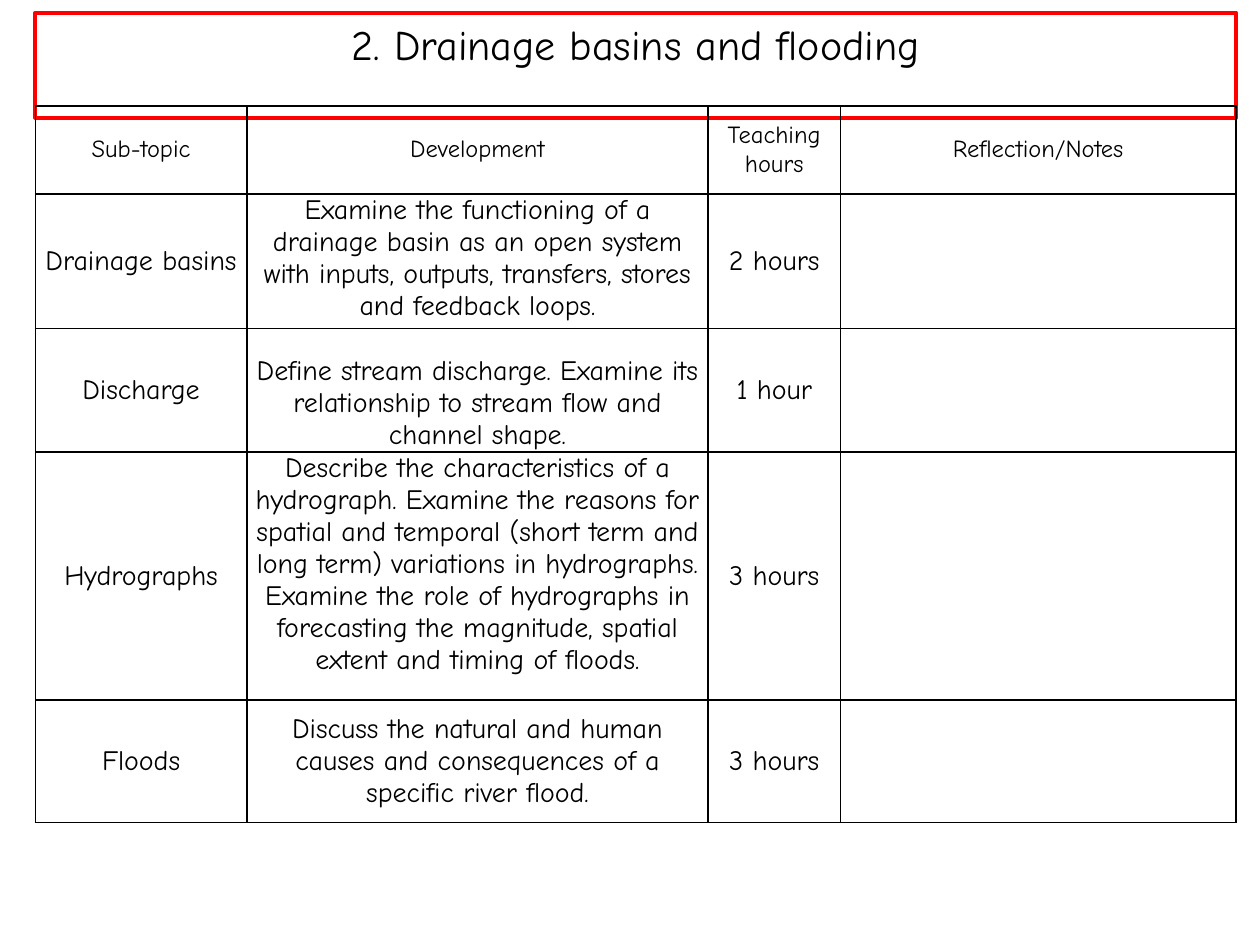
"""Build a slide that plans the drainage basins and flooding topic."""
import pptx
import pptx.dml.color
import pptx.enum.text
import pptx.oxml
import pptx.oxml.ns
import pptx.util

Inches = pptx.util.Inches
ANCHOR = pptx.enum.text.MSO_ANCHOR
COLORS = {"text": "000000", "grid": "000000", "paper": "FFFFFF", "frame": "FF0000"}
LEFT = 0.28
COLUMNS = [1.68, 3.66, 1.05, 3.14]
HEADERS = ["Sub-topic", "Development", "Teaching hours", "Reflection/Notes"]
TOPICS = [
    ("Drainage basins", "Examine the functioning of a drainage basin as an open system "
     "with inputs, outputs, transfers, stores and feedback loops.", "2 hours", 0.98, ANCHOR.TOP),
    ("Discharge", "Define stream discharge. Examine its relationship to stream flow "
     "and channel shape.", "1 hour", 0.98, ANCHOR.BOTTOM),
    ("Hydrographs", "Describe the characteristics of a hydrograph. Examine the reasons for "
     "spatial and temporal (short term and long term) variations in hydrographs. Examine the "
     "role of hydrographs in forecasting the magnitude, spatial extent and timing of floods.",
     "3 hours", 1.97, ANCHOR.TOP),
    ("Floods", "Discuss the natural and human causes and consequences of a specific "
     "river flood.", "3 hours", 0.97, ANCHOR.MIDDLE),
]


def rgb(name):
    return pptx.dml.color.RGBColor.from_string(COLORS[name])


def write_text(tf, text, size=16, font="Comic Neue", color="text"):
    p = tf.paragraphs[0]
    p.alignment = pptx.enum.text.PP_ALIGN.CENTER
    r = p.add_run()
    r.text = text
    r.font.name = font
    r.font.size = pptx.util.Pt(size)
    r.font.color.rgb = rgb(color)


class SlideBuilder:
    def __init__(self, slide, border=1):
        self.s = slide
        self.border = pptx.util.Pt(border)

    def title(self, text, left, top, width, height):
        sp = self.s.shapes.title
        sp.left, sp.top, sp.width, sp.height = map(Inches, (left, top, width, height))
        sp.fill.solid()
        sp.fill.fore_color.rgb = rgb("paper")
        sp.line.color.rgb = rgb("frame")
        sp.line.width = pptx.util.Pt(2.25)
        tf = sp.text_frame
        tf.word_wrap = True
        tf.vertical_anchor = ANCHOR.TOP
        tf.auto_size = pptx.enum.text.MSO_AUTO_SIZE.SHAPE_TO_FIT_TEXT
        write_text(tf, text, size=24)

    def table(self, left, top, columns, heights):
        frame = self.s.shapes.add_table(
            len(heights), len(columns), Inches(left), Inches(top),
            Inches(sum(columns)), Inches(sum(heights)))
        tbl = frame.table
        tbl.first_row = tbl.horz_banding = False
        for column, width in zip(tbl.columns, columns):
            column.width = Inches(width)
        for row, height in zip(tbl.rows, heights):
            row.height = Inches(height)
        return tbl

    def cell(self, cell, text, size=16, anchor=ANCHOR.MIDDLE):
        tc_pr = cell._tc.get_or_add_tcPr()
        for side in "LRTB":
            tc_pr.append(pptx.oxml.parse_xml(
                f'<a:ln{side} {pptx.oxml.ns.nsdecls("a")} w="{self.border}"><a:solidFill>'
                f'<a:srgbClr val="{COLORS["grid"]}"/></a:solidFill></a:ln{side}>'))
        cell.fill.background()
        cell.margin_left = cell.margin_right = Inches(0.07)
        cell.margin_top = cell.margin_bottom = 0
        cell.vertical_anchor = anchor
        if text:
            write_text(cell.text_frame, text, size=size)


def main():
    prs = pptx.Presentation()
    prs.slide_width, prs.slide_height = Inches(10), Inches(7.5)
    builder = SlideBuilder(prs.slides.add_slide(prs.slide_layouts[5]))
    builder.title("2. Drainage basins and flooding", LEFT, 0.1, sum(COLUMNS), 0.5)
    tbl = builder.table(LEFT, 0.84, COLUMNS, [0.7] + [topic[3] for topic in TOPICS])
    for col, header in enumerate(HEADERS):
        builder.cell(tbl.cell(0, col), header, size=14)
    for row, (name, development, hours, _, anchor) in enumerate(TOPICS, 1):
        builder.cell(tbl.cell(row, 0), name)
        builder.cell(tbl.cell(row, 1), development, anchor=anchor)
        builder.cell(tbl.cell(row, 2), hours)
        builder.cell(tbl.cell(row, 3), "")
    prs.save("out.pptx")


if __name__ == "__main__":
    main()
